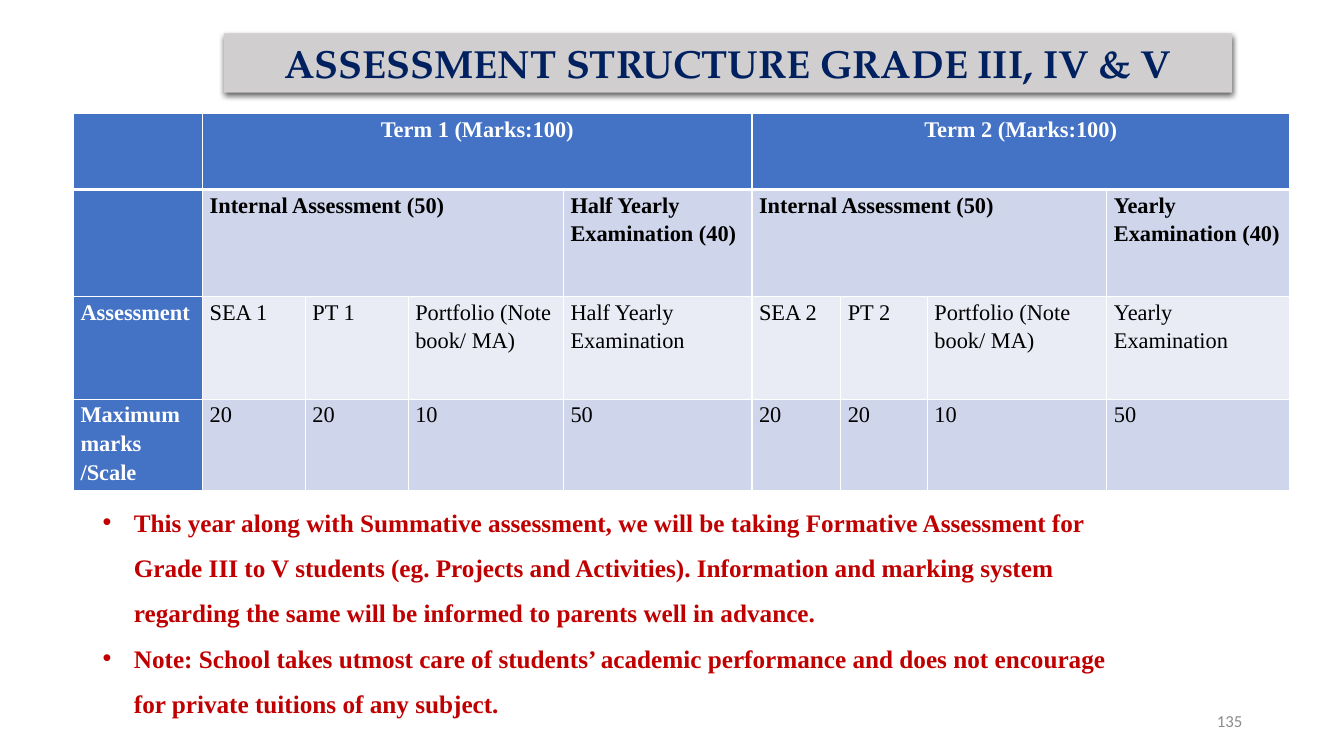
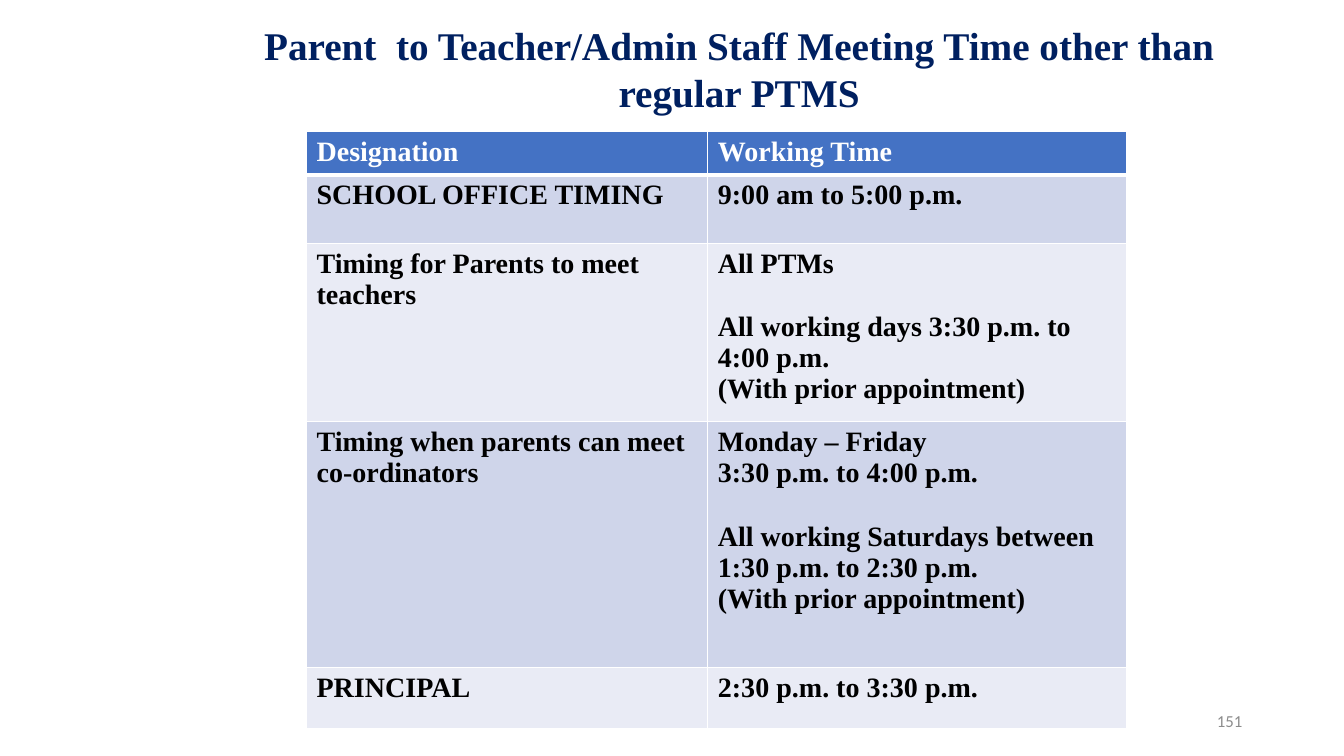
from dataclasses import dataclass
from typing import NamedTuple

from lxml.etree import SubElement
from pptx import Presentation
from pptx.dml.color import RGBColor
from pptx.enum.shapes import MSO_SHAPE as Preset
from pptx.enum.text import MSO_ANCHOR as Anchor, PP_ALIGN as Align
from pptx.oxml.ns import qn
from pptx.util import Inches, Pt

NAVY, RED, GREY, SILVER = "002060", "C00000", "8C8C8C", "D0CECE"
WHITE, BLACK, BLUE = "FFFFFF", "000000", "4472C4"
BANDS = ("CFD5EA", "E9EBF5")
SERIF, TITLE_SERIF, SANS = "Times New Roman", "TeX Gyre Pagella", "Calibri"
TITLE_SIZE = 28
THIN, THICK = 1, 3
LINE_RATIO = 1.15


class Box(NamedTuple):
    left: float
    top: float
    width: float
    height: float

    def lengths(self) -> tuple:
        return tuple(Inches(value) for value in self)


@dataclass
class TextStyle:
    size: float
    color: str
    font: str = SERIF
    bold: bool = True
    align: Align = Align.LEFT
    line_spacing: float = 1.0


@dataclass
class Grid:
    """A banded table; None in a row continues the cell to its left."""
    box: Box
    columns: list
    heights: list
    rows: list
    size: float
    margins: tuple
    bold_rows: int
    header_align: Align = Align.LEFT
    line_spacing: float = 1.0
    blue_first_column: bool = False


def rgb(color: str) -> RGBColor:
    return RGBColor.from_string(color)


def add_bullet(paragraph, indent: float) -> None:
    properties = paragraph._p.get_or_add_pPr()
    properties.set("marL", str(Inches(indent)))
    properties.set("indent", str(-Inches(indent)))
    SubElement(properties, qn("a:buFont"), typeface="Arial")
    SubElement(properties, qn("a:buChar"), char="•")


def write(frame, text: str, style: TextStyle, bullet_indent: float = 0) -> None:
    """Fill a frame; a double line break leaves one line of space."""
    font_format = {"name": style.font, "size": Pt(style.size), "bold": style.bold}
    paragraph_format = {"alignment": style.align, "line_spacing": style.line_spacing}
    paragraph = frame.paragraphs[0]
    for block_index, block in enumerate(text.split("\n\n")):
        for line_index, line in enumerate(block.split("\n")):
            if block_index or line_index:
                paragraph = frame.add_paragraph()
            if bullet_indent:
                add_bullet(paragraph, bullet_indent)
            for name, value in paragraph_format.items():
                setattr(paragraph, name, value)
            if block_index and not line_index:
                paragraph.space_before = Pt(style.size * LINE_RATIO)
            run = paragraph.add_run()
            run.text = line
            for name, value in font_format.items():
                setattr(run.font, name, value)
            run.font.color.rgb = rgb(style.color)


def add_text(slide, box: Box, text: str, style: TextStyle,
             anchor: Anchor = Anchor.TOP, bullet_indent: float = 0) -> None:
    frame = slide.shapes.add_textbox(*box.lengths()).text_frame
    frame.word_wrap = True
    frame.vertical_anchor = anchor
    write(frame, text, style, bullet_indent)


def add_page_number(slide, number: int) -> None:
    style = TextStyle(12, GREY, SANS, bold=False, align=Align.RIGHT)
    add_text(slide, Box(9.42, 6.95, 3, 0.4), str(number), style, Anchor.MIDDLE)


def add_shadow(shape, color: str, opacity: int, blur: float, distance: float) -> None:
    """Drop a shadow straight down; opacity in percent, lengths in points."""
    shape.shadow.inherit = False
    effects = shape._element.spPr.find(qn("a:effectLst"))
    shadow = SubElement(effects, qn("a:outerShdw"), blurRad=str(Pt(blur)),
                        dist=str(Pt(distance)), dir="5400000", algn="t",
                        rotWithShape="0")
    tint = SubElement(shadow, qn("a:srgbClr"), val=color)
    SubElement(tint, qn("a:alpha"), val=str(opacity * 1000))


def add_title_band(slide, box: Box, text: str) -> None:
    band = slide.shapes.add_shape(Preset.RECTANGLE, *box.lengths())
    band.fill.solid()
    band.fill.fore_color.rgb = rgb(SILVER)
    band.line.fill.background()
    add_shadow(band, BLACK, 63, 4.5, 1.5)
    band.text_frame.word_wrap = True
    band.text_frame.vertical_anchor = Anchor.MIDDLE
    write(band.text_frame, text,
          TextStyle(TITLE_SIZE, NAVY, TITLE_SERIF, align=Align.CENTER))


def set_borders(cell, top: float, bottom: float) -> None:
    properties = cell._tc.get_or_add_tcPr()
    widths = {"a:lnL": THIN, "a:lnR": THIN, "a:lnT": top, "a:lnB": bottom}
    for side, width in widths.items():
        line = SubElement(properties, qn(side), w=str(Pt(width)))
        fill = SubElement(line, qn("a:solidFill"))
        SubElement(fill, qn("a:srgbClr"), val=WHITE)


def span_end(row: list, start: int) -> int:
    end = start
    while end + 1 < len(row) and row[end + 1] is None:
        end += 1
    return end


def add_grid(slide, grid: Grid) -> None:
    table = slide.shapes.add_table(len(grid.rows), len(grid.columns),
                                   *grid.box.lengths()).table
    for column, width in zip(table.columns, grid.columns):
        column.width = Inches(width)
    for row, height in zip(table.rows, grid.heights):
        row.height = Inches(height)
    sides = ("margin_left", "margin_top", "margin_right", "margin_bottom")
    for r, row in enumerate(grid.rows):
        for c, text in enumerate(row):
            cell = table.cell(r, c)
            blue = r == 0 or (grid.blue_first_column and c == 0)
            set_borders(cell, THICK if r == 1 else THIN, THICK if r == 0 else THIN)
            cell.fill.solid()
            cell.fill.fore_color.rgb = rgb(BLUE if blue else BANDS[(r - 1) % 2])
            for side, margin in zip(sides, grid.margins):
                setattr(cell, side, Inches(margin))
            if not text:
                continue
            end = span_end(row, c)
            if end > c:
                cell.merge(table.cell(r, end))
            write(cell.text_frame, text, TextStyle(
                grid.size, WHITE if blue else BLACK,
                bold=blue or r < grid.bold_rows,
                align=grid.header_align if r == 0 else Align.LEFT,
                line_spacing=grid.line_spacing))


ASSESSMENT = Grid(
    box=Box(0.73, 1.13, 12.06, 3.74),
    columns=[1.28, 1.02, 1.02, 1.54, 1.87, 0.88, 0.86, 1.78, 1.81],
    heights=[0.75, 1.06, 1.02, 0.91],
    rows=[
        ["", "Term 1 (Marks:100)", None, None, None,
         "Term 2 (Marks:100)", None, None, None],
        ["", "Internal Assessment (50)", None, None, "Half Yearly Examination (40)",
         "Internal Assessment (50)", None, None, "Yearly Examination (40)"],
        ["Assessment",
         "SEA 1", "PT 1", "Portfolio (Note book/ MA)", "Half Yearly Examination",
         "SEA 2", "PT 2", "Portfolio (Note book/ MA)", "Yearly Examination"],
        ["Maximum marks /Scale", *["20", "20", "10", "50"] * 2],
    ],
    size=16, margins=(0.07, 0, 0.07, 0), bold_rows=2,
    header_align=Align.CENTER, line_spacing=1.15, blue_first_column=True,
)

MEETING_TIMES = Grid(
    box=Box(3.04, 1.3, 8.13, 5.93),
    columns=[3.98, 4.15],
    heights=[0.43, 0.68, 1.77, 2.44, 0.61],
    rows=[
        ["Designation", "Working Time"],
        ["SCHOOL OFFICE TIMING", "9:00 am to 5:00 p.m."],
        ["Timing for Parents to meet teachers",
         "All PTMs\n\nAll working days 3:30 p.m. to 4:00 p.m.\n"
         "(With prior appointment)"],
        ["Timing when parents can meet co-ordinators",
         "Monday – Friday\n3:30 p.m. to 4:00 p.m.\n\n"
         "All working Saturdays between\n1:30 p.m. to 2:30 p.m.\n"
         "(With prior appointment)"],
        ["PRINCIPAL", "2:30 p.m. to 3:30 p.m."],
    ],
    size=20, margins=(0.1, 0.05, 0.1, 0.05), bold_rows=5,
)

ASSESSMENT_NOTES = (
    "This year along with Summative assessment, we will be taking Formative "
    "Assessment for Grade III to V students (eg. Projects and Activities). "
    "Information and marking system regarding the same will be informed to "
    "parents well in advance.\n"
    "Note: School takes utmost care of students’ academic performance and does "
    "not encourage for private tuitions of any subject."
)


def build_assessment(slide) -> None:
    add_title_band(slide, Box(2.22, 0.33, 10, 0.59),
                   "ASSESSMENT STRUCTURE GRADE III, IV & V")
    add_grid(slide, ASSESSMENT)
    add_text(slide, Box(0.92, 4.83, 10.33, 2.32), ASSESSMENT_NOTES,
             TextStyle(18, RED, line_spacing=1.5), bullet_indent=0.31)
    add_page_number(slide, 135)


def build_meeting_times(slide) -> None:
    add_text(slide, Box(2.24, 0.16, 10.18, 1.04),
             "Parent  to Teacher/Admin Staff Meeting Time other than regular PTMS",
             TextStyle(TITLE_SIZE, NAVY, align=Align.CENTER))
    add_grid(slide, MEETING_TIMES)
    add_page_number(slide, 151)


def main() -> None:
    deck = Presentation()
    deck.slide_width, deck.slide_height = Inches(13.33), Inches(7.5)
    blank = deck.slide_layouts[6]
    for build in (build_assessment, build_meeting_times):
        build(deck.slides.add_slide(blank))
    deck.save("out.pptx")


if __name__ == "__main__":
    main()
